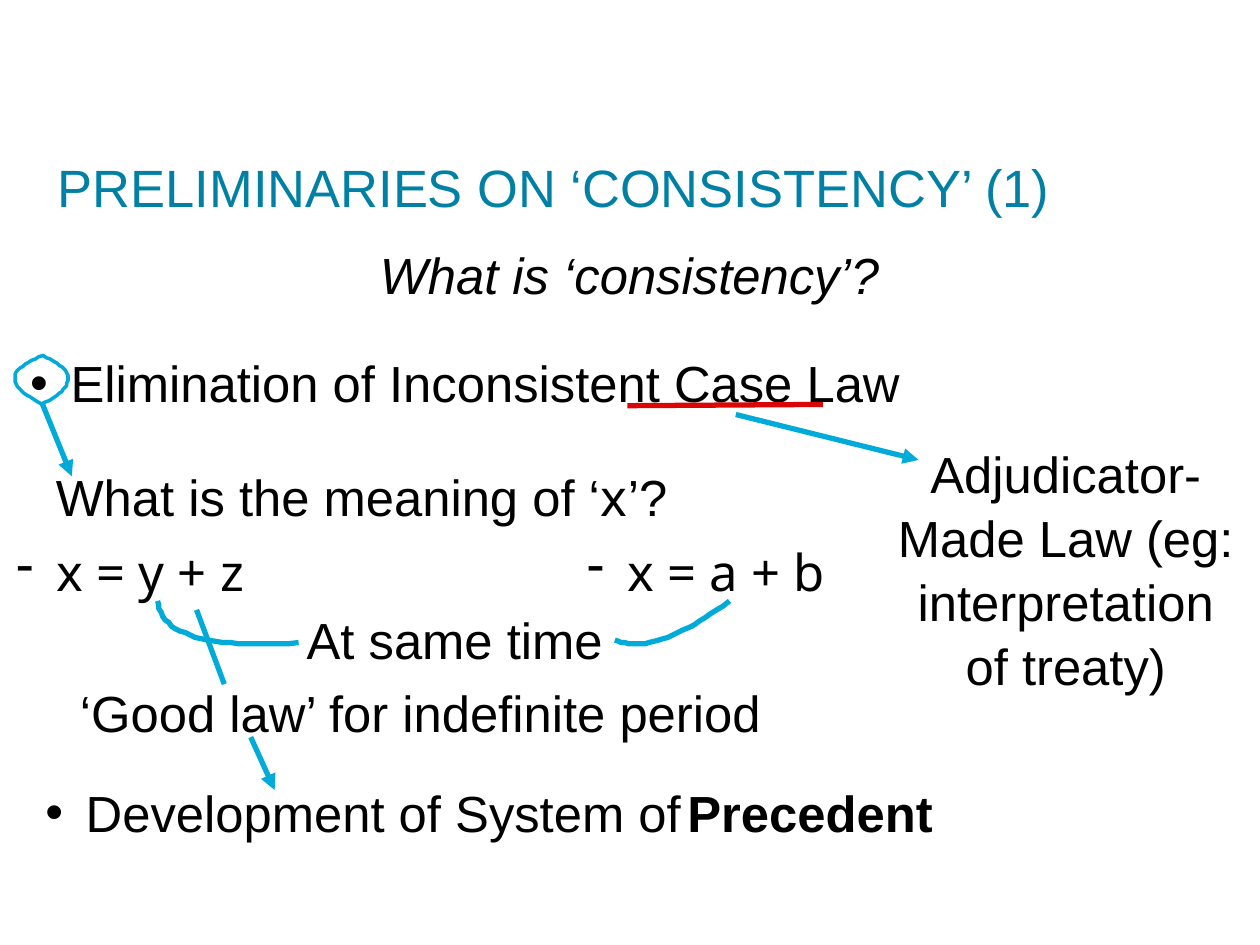
from pptx import Presentation
from pptx.dml.color import RGBColor
from pptx.enum.shapes import MSO_CONNECTOR
from pptx.enum.text import MSO_ANCHOR, MSO_AUTO_SIZE, PP_ALIGN
from pptx.oxml.ns import qn
from pptx.util import Pt
from lxml.etree import SubElement

SCALE = 9144
BLACK = RGBColor(0x00, 0x00, 0x00)
TEAL = RGBColor(0x00, 0x80, 0xA5)
CYAN = RGBColor(0x00, 0xAB, 0xDA)
RED = RGBColor(0xDA, 0x05, 0x06)
SANS, SYMBOL = "Arial", "Noto Sans"
CURVE_STEPS = 24
FRAME = {"word_wrap": True, "auto_size": MSO_AUTO_SIZE.NONE, "vertical_anchor": MSO_ANCHOR.TOP}
FONT = {"size": Pt(29), "name": SANS, "bold": False, "italic": False}
PARAGRAPH = {"alignment": PP_ALIGN.LEFT, "line_spacing": 1.05, "space_before": Pt(0)}
CENTER = {"alignment": PP_ALIGN.CENTER}


def px(length):
    """Turn px into EMU."""
    return int(length * SCALE)


def set_values(target, *formats):
    """Set the attributes named in the format dicts on a target."""
    for values in formats:
        for name, value in values.items():
            setattr(target, name, value)


def add_bullet(paragraph, character, margin):
    """Give a paragraph a hanging bullet."""
    properties = paragraph._p.get_or_add_pPr()
    properties.set("marL", str(px(margin)))
    properties.set("indent", str(px(-32)))
    SubElement(properties, qn("a:buChar"), char=character)


def fill_text(shape, box, runs, layout=None, font=None, color=BLACK, bullet=None, inset=6):
    """Place a text shape and write its single paragraph from (text, font name) runs."""
    set_values(shape, dict(zip(("left", "top", "width", "height"), map(px, box))))
    frame = shape.text_frame
    margins = {f"margin_{side}": px(inset) for side in ("left", "top", "right", "bottom")}
    set_values(frame, FRAME, margins)
    paragraph = frame.paragraphs[0]
    if bullet:
        add_bullet(paragraph, *bullet)
    set_values(paragraph, PARAGRAPH, layout or {})
    for text, name in runs:
        run = paragraph.add_run()
        run.text = text
        set_values(run.font, FONT, font or {}, {"name": name})
        run.font.color.rgb = color


def add_text(slide, box, runs, **formats):
    """Add a formatted text box."""
    fill_text(slide.shapes.add_textbox(0, 0, 0, 0), box, runs, **formats)


def add_line(slide, start, end, color=CYAN, arrow=False):
    """Add a straight line, with an arrowhead at its end if wanted."""
    connector = slide.shapes.add_connector(MSO_CONNECTOR.STRAIGHT, *map(px, start + end))
    connector.line.color.rgb = color
    connector.line.width = Pt(3)
    properties = connector._element.spPr
    if arrow:
        SubElement(properties.get_or_add_ln(), qn("a:tailEnd"), type="triangle")
    SubElement(properties, qn("a:effectLst"))


def add_curve(slide, corner, controls, width=3):
    """Add an open cubic curve whose control points are relative to a corner."""
    points = []
    for step in range(CURVE_STEPS + 1):
        t = step / CURVE_STEPS
        weights = ((1 - t) ** 3, 3 * t * (1 - t) ** 2, 3 * t * t * (1 - t), t ** 3)
        points.append(tuple(
            corner[axis] + sum(w * point[axis] for w, point in zip(weights, controls))
            for axis in (0, 1)
        ))
    builder = slide.shapes.build_freeform(*points[0], scale=SCALE)
    builder.add_line_segments(points[1:], close=False)
    shape = builder.convert_to_shape()
    shape.shadow.inherit = False
    shape.fill.background()
    shape.line.color.rgb = CYAN
    shape.line.width = Pt(width)


def add_heading(slide, left, top, width):
    """Place the title and the question below it."""
    fill_text(slide.shapes.title, (left + 41, top, 918, 60),
              [("PRELIMINARIES ON ‘CONSISTENCY’ (1)", SANS)],
              {"line_spacing": 0.9}, {"size": Pt(30)}, TEAL, inset=5)
    add_text(slide, (left, top + 61, width, 60), [("What is ‘consistency’?", SANS)],
             layout=CENTER, font={"italic": True})


def add_elimination(slide, left, top):
    """Place the first point, its circled bullet and the note on case law."""
    fill_text(slide.placeholders[1], (left, top, 770, 60),
              [("Elimination of Inconsistent Case Law", SANS)], bullet=("•", 32))
    add_text(slide, (left + 688, top + 72, 280, 206),
             [("Adjudicator-Made Law (eg: interpretation of treaty)", SANS)], layout=CENTER)
    add_line(slide, (left + 480, top + 51), (left + 635, top + 50), RED)
    add_line(slide, (left + 566, top + 58), (left + 711, top + 94), arrow=True)
    add_curve(slide, (left, top), [(16, 50), (-14, 35), (-14, 22), (17, 11)], 2)
    add_curve(slide, (left, top), [(15, 50), (43, 36), (43, 23), (16, 11)], 2)
    add_line(slide, (left + 15, top + 48), (left + 39, top + 107), arrow=True)


def add_meanings(slide, left, top):
    """Place the two readings of x and what links them."""
    add_text(slide, (left + 29, top, 516, 65),
             [("What is the meaning of ‘", SANS), ("x", SYMBOL), ("’?", SANS)],
             layout={**CENTER, "line_spacing": 1.0})
    for offset, formula in ((0, "x = y + z"), (453, "x = a + b")):
        add_text(slide, (left + offset, top + 59, 256, 65), [(formula, SYMBOL)],
                 layout={"line_spacing": 1.0}, bullet=("-", 39))
    add_text(slide, (left + 222, top + 111, 278, 60), [("At same time", SANS)], layout=CENTER)
    add_text(slide, (left + 46, top + 169, 576, 60),
             [("‘Good law’ for indefinite period", SANS)], layout=CENTER)
    add_curve(slide, (left, top), [(237, 146), (165, 151), (128, 140), (125, 113)])
    add_curve(slide, (left, top), [(579, 113), (539, 143), (509, 153), (488, 144)])
    add_line(slide, (left + 156, top + 120), (left + 178, top + 179))
    add_line(slide, (left + 199, top + 221), (left + 218, top + 263), arrow=True)


def add_precedent(slide, left, top):
    """Place the closing point and its key word."""
    fill_text(slide.placeholders[2], (left, top, 534, 60),
              [("Development of System of", SANS)], bullet=("•", 32))
    add_text(slide, (left + 474, top, 278, 60), [("Precedent", SANS)],
             layout=CENTER, font={"bold": True})


def main():
    """Build the slide and save it."""
    presentation = Presentation()
    set_values(presentation, {"slide_width": px(1000), "slide_height": px(750)})
    slide = presentation.slides.add_slide(presentation.slide_layouts.get_by_name("Two Content"))
    add_heading(slide, 0, 124, 1000)
    add_elimination(slide, 18, 271)
    add_meanings(slide, 0, 364)
    add_precedent(slide, 30, 612)
    presentation.save("out.pptx")


if __name__ == "__main__":
    main()
